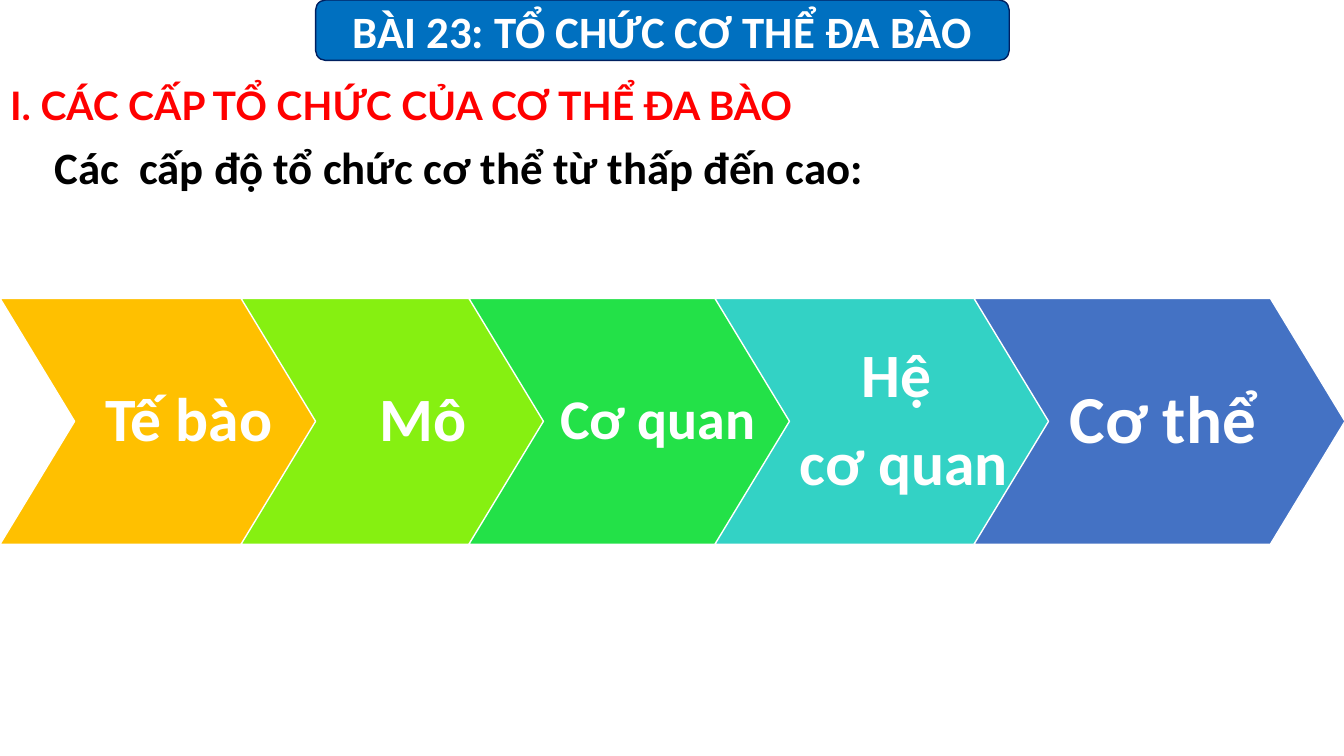
from pptx import Presentation
from pptx.dml.color import RGBColor
from pptx.enum.shapes import MSO_SHAPE
from pptx.enum.text import MSO_ANCHOR, MSO_AUTO_SIZE, PP_ALIGN
from pptx.oxml.xmlchemy import OxmlElement
from pptx.util import Inches, Pt

ROUNDED, CHEVRON = MSO_SHAPE.ROUNDED_RECTANGLE, MSO_SHAPE.CHEVRON
LEFT, CENTER = PP_ALIGN.LEFT, PP_ALIGN.CENTER
TOP, MIDDLE = MSO_ANCHOR.TOP, MSO_ANCHOR.MIDDLE

THEME = {
    "body_font": "Calibri", "heading_font": "Lato",
    "white": "FFFFFF", "black": "000000", "heading": "FF0000",
    "banner": "0070C0", "banner_line": "002060",
    "banner_size": 32, "heading_size": 28, "intro_size": 32,
}
CHEVRON_TOP, CHEVRON_W, CHEVRON_H, NOTCH = 2.96, 3.68, 2.44, 0.74
LEVELS = [  # left, text, fill, type size
    (0, "Tế bào", "FFC000", 44),
    (2.39, "Mô ", "86F011", 44),
    (4.65, "Cơ quan", "23E148", 40),
    (7.09, "Hệ \ncơ quan", "33D2C5", 44),
    (9.66, "Cơ thể", "4472C4", 48),
]


def write(s, text, size, color, font=THEME["body_font"], align=LEFT, anchor=TOP,
          wrap=True, spacing=1.0, after=0):
    """Fill a shape with bold text; after is a share of the type size."""
    tf = s.text_frame
    tf.text = text
    tf.word_wrap = wrap
    tf.auto_size = MSO_AUTO_SIZE.NONE
    tf.vertical_anchor = anchor
    for p in tf.paragraphs:
        p.alignment = align
        p.line_spacing = spacing
        p.space_before = Pt(0)
        p.space_after = Pt(size * after)
        f = p.runs[0].font
        f.name, f.size, f.bold = font, Pt(size), True
        f.color.rgb = RGBColor.from_string(color)


def add_block(kind, x, y, w, h, fill, line):
    s = slide.shapes.add_shape(kind, Inches(x), Inches(y), Inches(w), Inches(h))
    s.shadow.inherit = False
    s.fill.solid()
    s.fill.fore_color.rgb = RGBColor.from_string(fill)
    s.line.color.rgb = RGBColor.from_string(line)
    s.line.width = Pt(1)
    return s


prs = Presentation()
prs.slide_width, prs.slide_height = Inches(13.33), Inches(7.5)
slide = prs.slides.add_slide(prs.slide_layouts[1])

# Lesson banner
banner = add_block(ROUNDED, 3.13, 0, 6.88, 0.6, THEME["banner"], THEME["banner_line"])
write(banner, "BÀI 23: TỔ CHỨC CƠ THỂ ĐA BÀO", THEME["banner_size"], THEME["white"],
      align=CENTER, anchor=MIDDLE)

# Section heading and introduction
heading, intro = slide.placeholders
heading.left, heading.top = Inches(0), Inches(0.76)
heading.width, heading.height = Inches(8.74), Inches(0.57)
write(heading, "I. CÁC CẤP TỔ CHỨC CỦA CƠ THỂ ĐA BÀO", THEME["heading_size"],
      THEME["heading"], font=THEME["heading_font"])

intro.left, intro.top = Inches(0.44), Inches(1.34)
intro.width, intro.height = Inches(9.91), Inches(0.64)
write(intro, "Các  cấp độ tổ chức cơ thể từ thấp đến cao:", THEME["intro_size"],
      THEME["black"])
pPr = intro.text_frame.paragraphs[0]._p.get_or_add_pPr()
pPr.set("marL", "0")
pPr.set("indent", "0")
pPr.append(OxmlElement("a:buNone"))

# Levels of organisation, lowest to highest
for x, text, fill, size in LEVELS:
    s = add_block(CHEVRON, x, CHEVRON_TOP, CHEVRON_W, CHEVRON_H, fill, THEME["white"])
    s.adjustments[0] = NOTCH / CHEVRON_H
    write(s, text, size, THEME["white"], align=CENTER, anchor=MIDDLE, wrap=False,
          spacing=0.9, after=0.35)
    tf = s.text_frame
    tf.margin_left, tf.margin_right = Inches(0.07), 0
    tf.margin_top = tf.margin_bottom = Inches(0.03)

prs.save("out.pptx")
